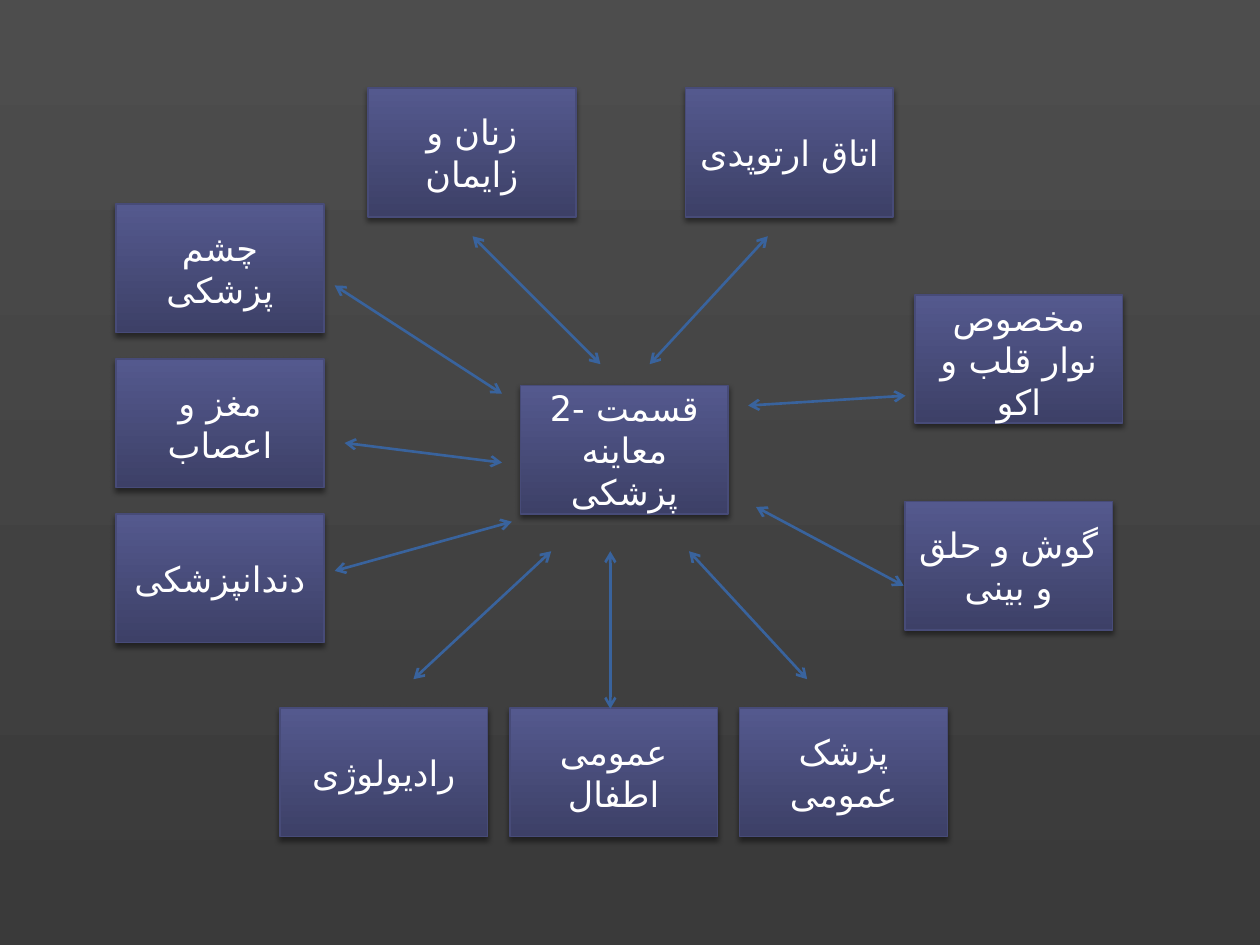
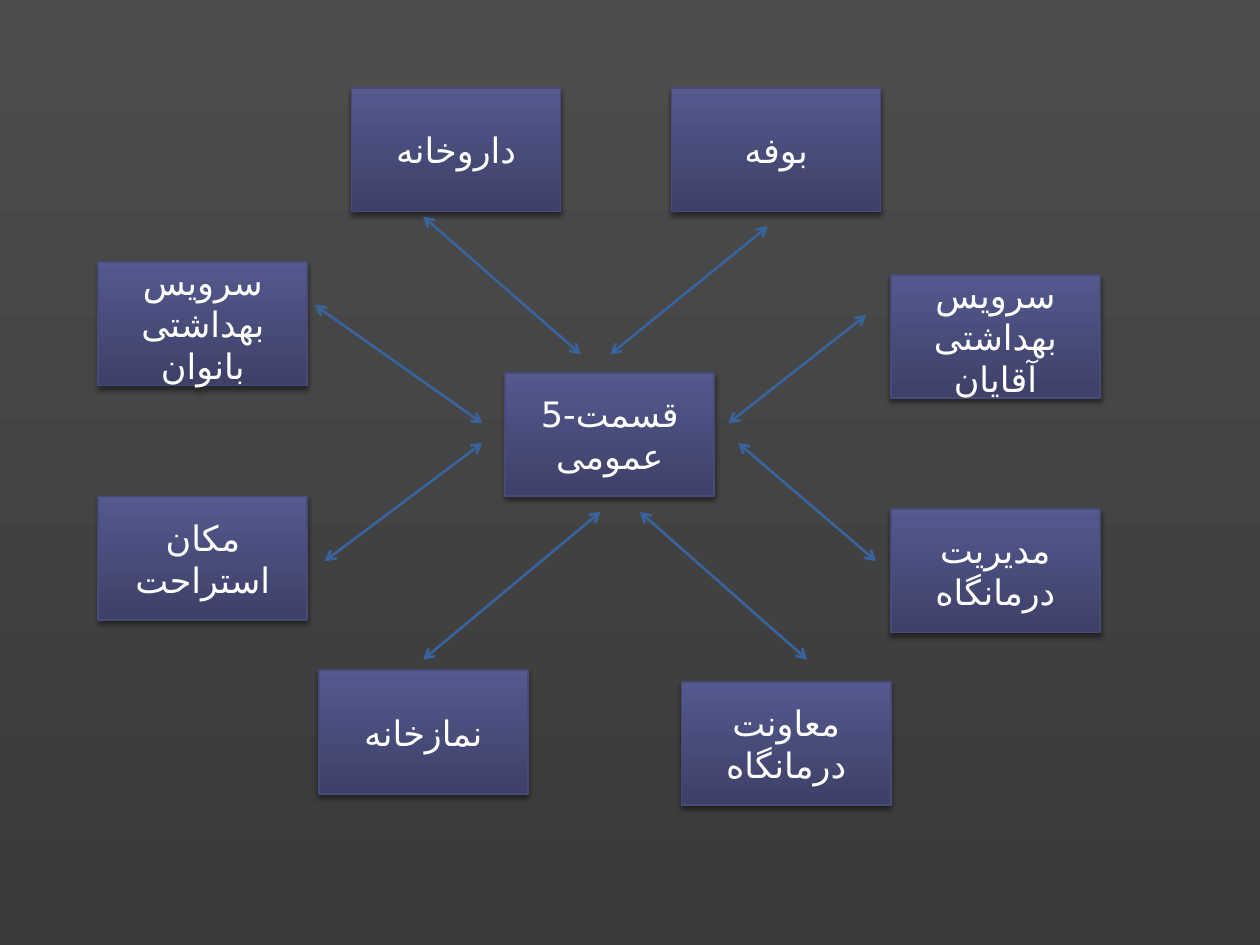
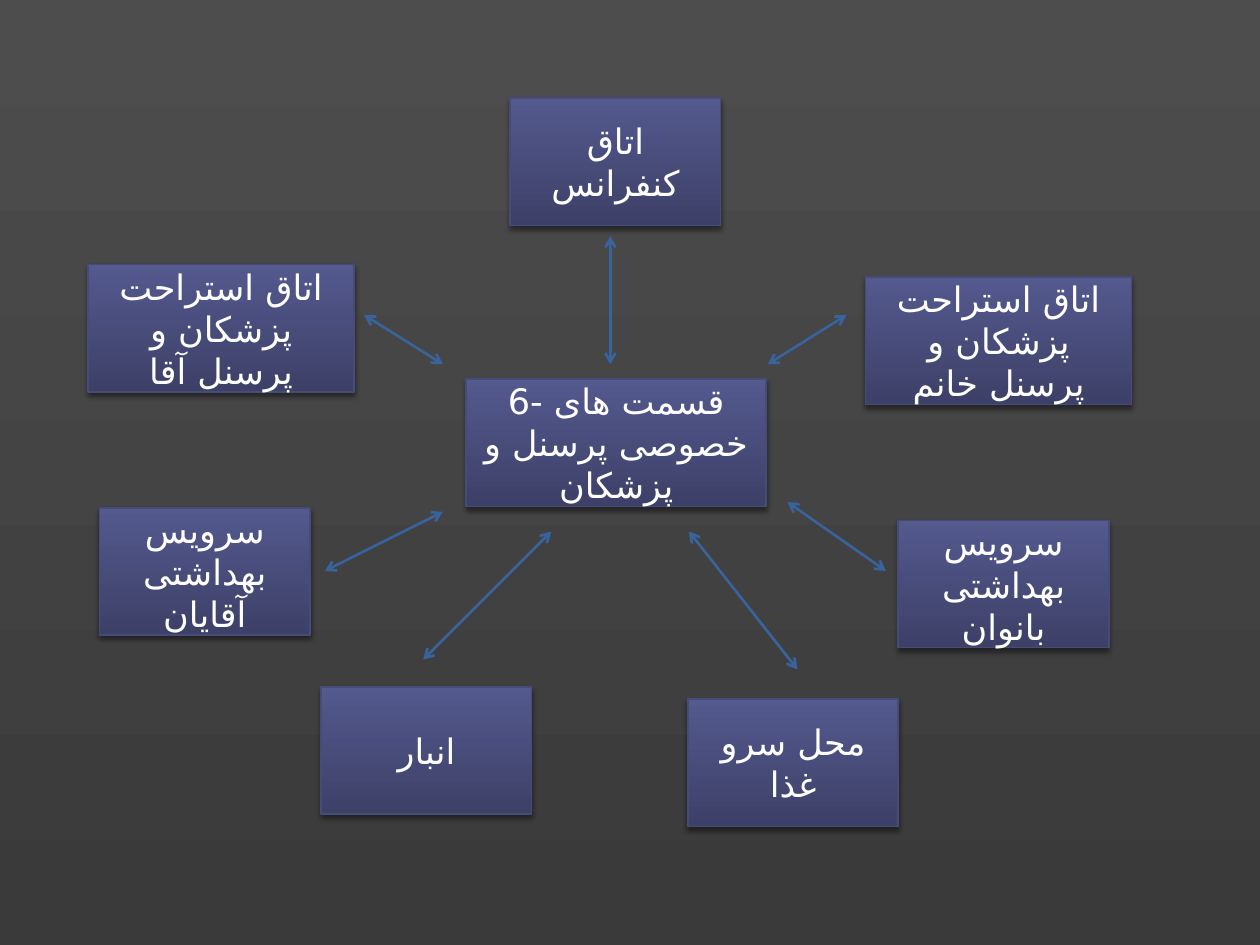
from lxml import etree
from pptx import Presentation
from pptx.dml.color import RGBColor
from pptx.enum.shapes import MSO_CONNECTOR, MSO_SHAPE
from pptx.enum.text import MSO_ANCHOR, PP_ALIGN
from pptx.oxml import parse_xml
from pptx.oxml.ns import nsdecls, qn
from pptx.util import Inches, Pt

RECT = MSO_SHAPE.RECTANGLE
LINE = MSO_CONNECTOR.STRAIGHT
MIDDLE = MSO_ANCHOR.MIDDLE
CENTER = PP_ALIGN.CENTER

BACK = (RGBColor(0x4D, 0x4D, 0x4D), RGBColor(0x3A, 0x3A, 0x3A))
BOX = (RGBColor(0x54, 0x59, 0x8E), RGBColor(0x3D, 0x40, 0x67))
EDGE = RGBColor(0x47, 0x4B, 0x78)
ARROW = RGBColor(0x39, 0x63, 0x9D)
WHITE = RGBColor(0xFF, 0xFF, 0xFF)
FONT = "DejaVu Sans"
WIDTH, HEIGHT = Inches(10), Inches(7.5)
COLS = 128
CELL = WIDTH / COLS

# Each run: left, top, step across, step down, box width, labels.
SLIDES = [
    {
        "high": 1.02,
        "runs": [
            (4.13, 3.06, 0, 0, 1.65, ["2- قسمت معاینه پزشکی"]),
            (2.92, 0.7, 2.52, 0, 1.65, ["زنان و زایمان", "اتاق ارتوپدی"]),
            (0.92, 1.62, 0, 1.23, 1.65, ["چشم پزشکی", "مغز و اعصاب", "دندانپزشکی"]),
            (7.26, 2.34, -0.08, 1.64, 1.65, ["مخصوص نوار قلب و اکو", "گوش و حلق و بینی"]),
            (2.22, 5.62, 1.825, 0, 1.65, ["رادیولوژی", "عمومی اطفال", "پزشک عمومی"]),
        ],
        "arrows": [
            (52, 53, 34, 58), (56, 56, 42, 69), (48, 24, 61, 37), (78, 24, 66, 37),
            (34, 29, 51, 40), (76, 41.2, 92, 40.2), (51, 47, 35, 45),
            (76.8, 51.5, 91.8, 59.5), (70, 56, 82, 69), (62, 56, 62, 72),
        ],
    },
    {
        "high": 0.98,
        "runs": [
            (4.01, 2.96, 0, 0, 1.66, ["5-قسمت عمومی"]),
            (2.79, 0.7, 2.54, 0, 1.66, ["داروخانه", "بوفه"]),
            (0.78, 2.08, 0, 1.86, 1.66, ["سرویس بهداشتی بانوان", "مکان استراحت"]),
            (7.07, 2.18, 0, 1.86, 1.66, ["سرویس بهداشتی آقایان", "مدیریت درمانگاه"]),
            (2.53, 5.32, 2.88, 0.09, 1.66, ["نمازخانه", "معاونت درمانگاه"]),
        ],
        "arrows": [
            (78, 23, 62, 36), (43, 22, 59, 36), (32, 31, 49, 43), (88, 32, 74, 43),
            (33, 57, 49, 45), (75, 45, 89, 57), (65, 52, 82, 67), (61, 52, 43, 67),
        ],
    },
    {
        "high": 1.01,
        "runs": [
            (3.7, 3.01, 0, 0, 2.38, ["6- قسمت های خصوصی پرسنل و پزشکان"]),
            (4.05, 0.78, 0, 0, 1.67, ["اتاق کنفرانس"]),
            (0.7, 2.1, 6.17, 0.1, 2.11,
             ["اتاق استراحت پزشکان و پرسنل آقا", "اتاق استراحت پزشکان و پرسنل خانم"]),
            (0.79, 4.03, 6.34, 0.1, 1.67, ["سرویس بهداشتی آقایان", "سرویس بهداشتی بانوان"]),
            (2.55, 5.45, 2.91, 0.1, 1.67, ["انبار", "محل سرو غذا"]),
        ],
        "arrows": [
            (62, 24, 62, 37), (33, 58, 45, 52), (80, 51, 90, 58), (86, 32, 78, 37),
            (37, 32, 45, 37), (56, 54, 43, 67), (70, 54, 81, 68),
        ],
    },
]


def shade(fill, tones):
    fill.gradient()
    fill.gradient_angle = 270
    for stop, tone in zip(fill.gradient_stops, tones):
        stop.color.rgb = tone


def cast(shape):
    shape.shadow.inherit = False
    glow = parse_xml(
        f'<a:outerShdw {nsdecls("a")} blurRad="{Pt(3)}" dist="{Pt(2)}" dir="5400000" '
        'algn="ctr" rotWithShape="0"><a:srgbClr val="000000">'
        '<a:alpha val="45000"/></a:srgbClr></a:outerShdw>'
    )
    shape._element.spPr.find(qn("a:effectLst")).append(glow)


def write(frame, text, size=20, color=WHITE, font=FONT, align=CENTER):
    frame.word_wrap = True
    frame.vertical_anchor = MIDDLE
    para = frame.paragraphs[0]
    para.alignment = align
    run = para.add_run()
    run.text = text
    run.font.size = Pt(size)
    run.font.color.rgb = color
    run.font.name = font
    etree.SubElement(run.font._element, qn("a:cs"), typeface=font)


def add_box(slide, text, left, top, wide, high):
    box = slide.shapes.add_shape(RECT, *map(Inches, (left, top, wide, high)))
    shade(box.fill, BOX)
    box.line.color.rgb = EDGE
    box.line.width = Pt(1)
    cast(box)
    write(box.text_frame, text)


def add_arrow(slide, ends):
    link = slide.shapes.add_connector(LINE, *(round(end * CELL) for end in ends))
    link.line.color.rgb = ARROW
    link.line.width = Pt(1.5)
    for tip in ("a:headEnd", "a:tailEnd"):
        etree.SubElement(link.line._get_or_add_ln(), qn(tip), type="arrow")
    etree.SubElement(link._element.spPr, qn("a:effectLst"))


def main():
    deck = Presentation()
    deck.slide_width, deck.slide_height = WIDTH, HEIGHT
    shade(deck.slide_master.background.fill, BACK)
    for page in SLIDES:
        slide = deck.slides.add_slide(deck.slide_layouts[6])
        for left, top, across, down, wide, names in page["runs"]:
            for i, name in enumerate(names):
                add_box(slide, name, left + i * across, top + i * down, wide, page["high"])
        for ends in page["arrows"]:
            add_arrow(slide, ends)
    deck.save("out.pptx")


if __name__ == "__main__":
    main()
